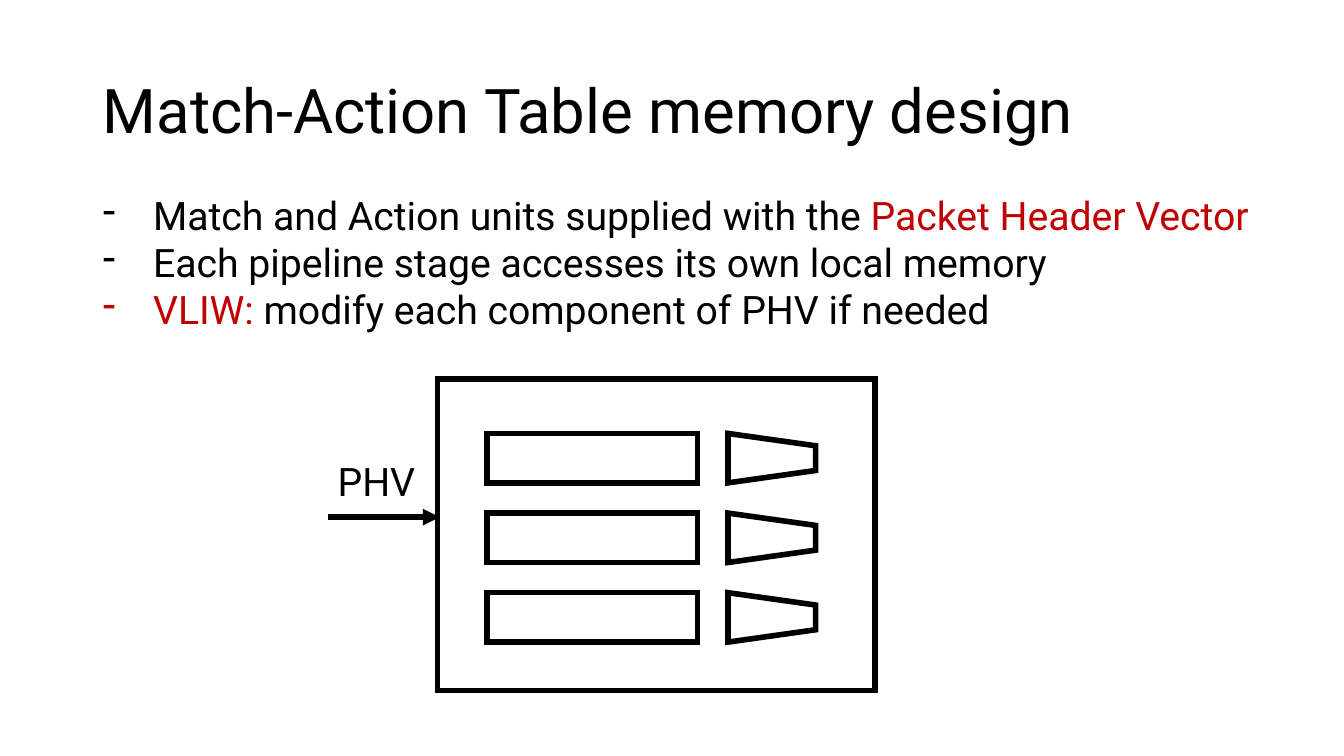
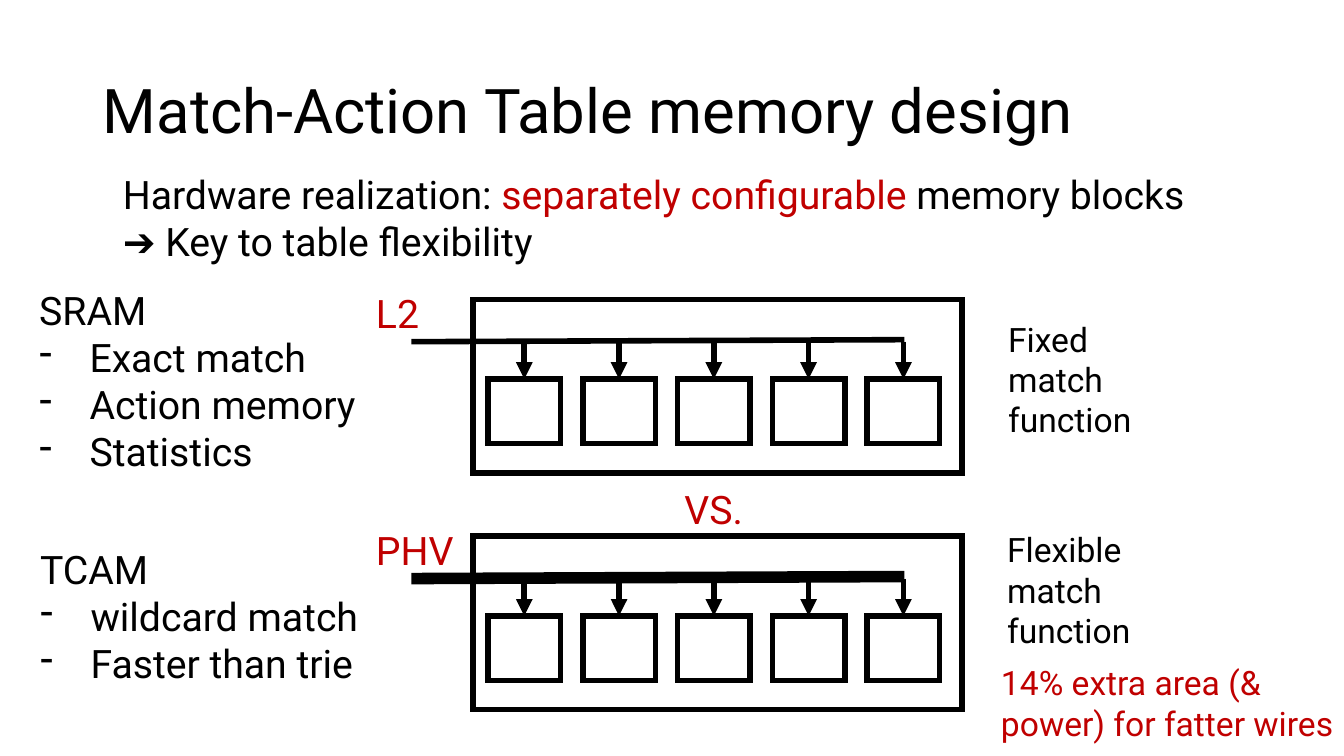
from dataclasses import dataclass

from pptx import Presentation
from pptx.dml.color import RGBColor
from pptx.enum.shapes import MSO_CONNECTOR, MSO_SHAPE
from pptx.enum.text import MSO_ANCHOR, MSO_AUTO_SIZE, PP_ALIGN
from pptx.oxml.ns import qn
from pptx.shapes.autoshape import Shape
from pptx.shapes.connector import Connector
from pptx.shapes.shapetree import GroupShapes
from pptx.slide import Slide
from pptx.text.text import _Paragraph as Paragraph
from pptx.util import Inches, Pt
from lxml import etree

BLACK = RGBColor(0x00, 0x00, 0x00)
RED = RGBColor(0xC0, 0x00, 0x00)
FONT = "Roboto"
TITLE = "Match-Action Table memory design"
TITLE_SIZE = 44
BODY_SIZE = 28
NOTE_SIZE = 24
LINE_WIDTH = 4
BULLET_INDENT = Inches(0.5)

RECTANGLE = MSO_SHAPE.RECTANGLE
TRAPEZOID = MSO_SHAPE.TRAPEZOID
STRAIGHT = MSO_CONNECTOR.STRAIGHT
LEFT = PP_ALIGN.LEFT
MIDDLE = MSO_ANCHOR.MIDDLE
NO_AUTOFIT = MSO_AUTO_SIZE.NONE
FIT_SHAPE = MSO_AUTO_SIZE.SHAPE_TO_FIT_TEXT
TOP_SIDE = 0


@dataclass(frozen=True)
class Box:
    left: float
    top: float
    width: float
    height: float

    def lengths(self) -> tuple[int, int, int, int]:
        return (Inches(self.left), Inches(self.top),
                Inches(self.width), Inches(self.height))


@dataclass(frozen=True)
class Span:
    text: str
    color: RGBColor = BLACK


@dataclass(frozen=True)
class Line:
    spans: tuple[Span, ...]
    bullet: bool = False


@dataclass(frozen=True)
class TextBlock:
    box: Box
    lines: tuple[Line, ...]
    size: int = BODY_SIZE


@dataclass(frozen=True)
class MemoryBank:
    label: str
    top: float
    bus_width: float


def plain(text: str, color: RGBColor = BLACK) -> Line:
    return Line((Span(text, color),))


def bullet(*spans: Span) -> Line:
    return Line(spans, bullet=True)


def add_span(paragraph: Paragraph, span: Span, size: int) -> None:
    run = paragraph.add_run()
    run.text = span.text
    run.font.name = FONT
    run.font.size = Pt(size)
    run.font.color.rgb = span.color


def set_dash_bullet(paragraph: Paragraph) -> None:
    properties = paragraph._p.get_or_add_pPr()
    properties.set("marL", str(BULLET_INDENT))
    properties.set("indent", str(-BULLET_INDENT))
    etree.SubElement(properties, qn("a:buFontTx"))
    etree.SubElement(properties, qn("a:buChar")).set("char", "-")


def add_text(shapes: GroupShapes, block: TextBlock) -> None:
    frame = shapes.add_textbox(*block.box.lengths()).text_frame
    frame.word_wrap = True
    frame.auto_size = FIT_SHAPE
    for index, line in enumerate(block.lines):
        paragraph = frame.add_paragraph() if index else frame.paragraphs[0]
        if line.bullet:
            set_dash_bullet(paragraph)
        for span in line.spans:
            add_span(paragraph, span, block.size)


def style_line(shape: Shape | Connector, width: float) -> None:
    """Give a shape or connector a black line with sharp corners."""
    shape.line.color.rgb = BLACK
    shape.line.width = Pt(width)
    join = etree.SubElement(shape.line._get_or_add_ln(), qn("a:miter"))
    join.set("lim", "800000")


def add_outline(shapes: GroupShapes, box: Box,
                preset: MSO_SHAPE = RECTANGLE, rotation: float = 0) -> Shape:
    shape = shapes.add_shape(preset, *box.lengths())
    shape.rotation = rotation
    shape.shadow.inherit = False
    shape.fill.background()
    style_line(shape, LINE_WIDTH)
    return shape


def add_line(shapes: GroupShapes, start: tuple[float, float],
             end: tuple[float, float], width: float = LINE_WIDTH,
             arrow: bool = False) -> Connector:
    connector = shapes.add_connector(
        STRAIGHT, *(Inches(value) for value in (*start, *end)))
    style_line(connector, width)
    if arrow:
        head = etree.SubElement(connector.line._get_or_add_ln(), qn("a:tailEnd"))
        head.set("type", "triangle")
    etree.SubElement(connector._element.spPr, qn("a:effectLst"))
    return connector


def add_titled_slide(presentation: Presentation) -> Slide:
    slide = presentation.slides.add_slide(presentation.slide_layouts[5])
    title = slide.shapes.title
    title.left, title.top, title.width, title.height = Box(0.92, 0.4, 11.5, 1.45).lengths()
    frame = title.text_frame
    frame.vertical_anchor = MIDDLE
    frame.auto_size = NO_AUTOFIT
    frame.word_wrap = True
    paragraph = frame.paragraphs[0]
    paragraph.alignment = LEFT
    paragraph.line_spacing = 0.9
    add_span(paragraph, Span(TITLE), TITLE_SIZE)
    return slide


def add_pipeline_stage(slide: Slide) -> None:
    """Draw one stage: three match tables, each with its action unit."""
    shapes = slide.shapes.add_group_shape().shapes
    for row in range(3):
        top = 4.3 + 0.79 * row
        add_outline(shapes, Box(4.83, top, 2.09, 0.49))
        add_outline(shapes, Box(7.41, top - 0.19, 0.49, 0.87), TRAPEZOID, 90)
    add_outline(shapes, Box(4.34, 3.76, 4.34, 3.09))


def add_memory_bank(slide: Slide, bank: MemoryBank) -> None:
    """Draw a frame of memory blocks that are all fed by one bus."""
    shapes = slide.shapes.add_group_shape().shapes
    label_box = Box(3.63, bank.top - 0.15, 1.21, 0.57)
    add_text(shapes, TextBlock(label_box, (plain(bank.label, RED),)))
    add_outline(shapes, Box(4.69, bank.top, 4.85, 1.72))
    bus_top = bank.top + 0.42
    add_line(shapes, (4.08, bus_top), (8.97, bus_top - 0.02), bank.bus_width)
    block_top = bank.top + 0.79
    for column in range(5):
        left = 4.84 + 0.94 * column
        block = add_outline(shapes, Box(left, block_top, 0.72, 0.64))
        center = left + 0.36
        feed = add_line(shapes, (center, bus_top), (center, block_top), arrow=True)
        feed.end_connect(block, TOP_SIDE)


STAGE_TEXTS = (
    TextBlock(Box(0.92, 1.85, 11.67, 1.51), (
        bullet(Span("Match and Action units supplied with the "),
               Span("Packet Header Vector", RED)),
        bullet(Span("Each pipeline stage accesses its own local memory")),
        bullet(Span("VLIW: ", RED),
               Span("modify each component of PHV if needed")),
    )),
    TextBlock(Box(3.25, 4.49, 1.21, 0.57), (plain("PHV"),)),
)

MEMORY_BANKS = (MemoryBank("L2", 2.97, LINE_WIDTH), MemoryBank("PHV", 5.32, 8.25))

MEMORY_TEXTS = (
    TextBlock(Box(1.12, 1.64, 11.09, 1.04), (
        Line((Span("Hardware realization: "),
              Span("separately configurable ", RED),
              Span("memory blocks"))),
        plain("➔ Key to table flexibility"),
    )),
    TextBlock(Box(0.29, 2.79, 3.64, 1.99), (
        plain("SRAM"),
        bullet(Span("Exact match")),
        bullet(Span("Action memory")),
        bullet(Span("Statistics")),
    )),
    TextBlock(Box(0.3, 5.36, 3.46, 1.99), (
        plain("TCAM"),
        bullet(Span("wildcard match")),
        bullet(Span("Faster than trie")),
    )),
    TextBlock(Box(6.69, 4.77, 0.99, 0.57), (plain("VS.", RED),)),
    TextBlock(Box(9.9, 3.11, 1.55, 1.31),
              (plain("Fixed"), plain("match function")), NOTE_SIZE),
    TextBlock(Box(9.89, 5.2, 1.55, 1.31),
              (plain("Flexible match function"),), NOTE_SIZE),
    TextBlock(Box(9.83, 6.52, 3.5, 0.91),
              (plain("14% extra area (& power) for fatter wires", RED),), NOTE_SIZE),
)


def build_stage_slide(presentation: Presentation) -> None:
    slide = add_titled_slide(presentation)
    add_pipeline_stage(slide)
    add_line(slide.shapes, (3.25, 5.13), (4.36, 5.13), arrow=True)
    for block in STAGE_TEXTS:
        add_text(slide.shapes, block)


def build_memory_slide(presentation: Presentation) -> None:
    slide = add_titled_slide(presentation)
    for bank in MEMORY_BANKS:
        add_memory_bank(slide, bank)
    for block in MEMORY_TEXTS:
        add_text(slide.shapes, block)


def main() -> None:
    presentation = Presentation()
    presentation.slide_width = Inches(13.33)
    presentation.slide_height = Inches(7.5)
    build_stage_slide(presentation)
    build_memory_slide(presentation)
    presentation.save("out.pptx")


if __name__ == "__main__":
    main()
